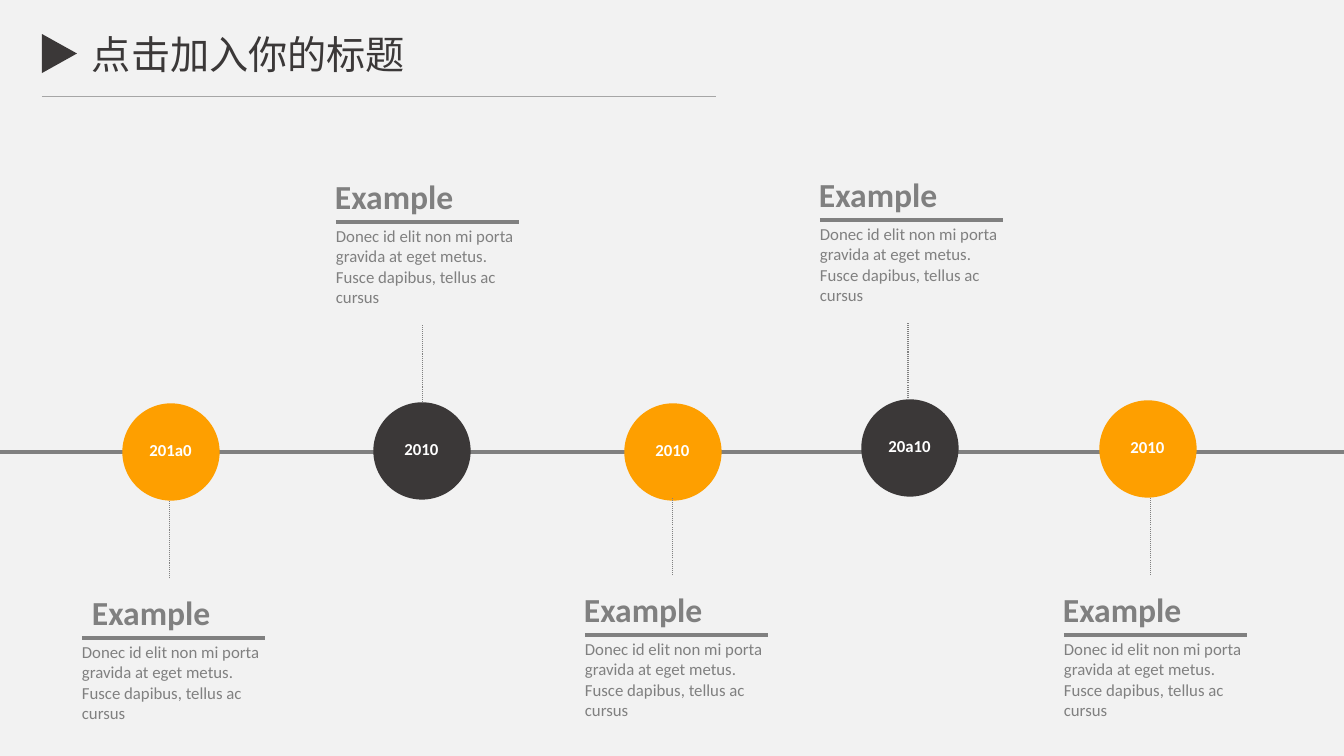
from lxml import etree
from pptx import Presentation
from pptx.dml.color import RGBColor
from pptx.enum.dml import MSO_LINE
from pptx.enum.shapes import MSO_CONNECTOR, MSO_SHAPE
from pptx.enum.text import MSO_AUTO_SIZE, PP_ALIGN
from pptx.oxml.ns import qn
from pptx.util import Pt

STRAIGHT = MSO_CONNECTOR.STRAIGHT
OVAL, TRIANGLE = MSO_SHAPE.OVAL, MSO_SHAPE.ISOSCELES_TRIANGLE
CENTER, LEFT = PP_ALIGN.CENTER, PP_ALIGN.LEFT
GROW = MSO_AUTO_SIZE.SHAPE_TO_FIT_TEXT
DOTTED = MSO_LINE.ROUND_DOT

# Content
TITLE = "点击加入你的标题"
HEADING = "Example"
BODY = "Donec id elit non mi porta gravida at eget metus. Fusce dapibus, tellus ac cursus"
PAPER, DARK, ORANGE, GREY, WHITE = "F2F2F2", "3B3838", "FE9F00", "808080", "FFFFFF"
PALE = "A6A6A6"

# year, colour, circle (left, top), rule (left, y), stem x, heading left
MILESTONES = [
    ("201a0", ORANGE, (125, 406), (82, 638), 170, 82),
    ("2010", DARK, (376, 405), (336, 222), 423, 325),
    ("2010", ORANGE, (627, 406), (585, 635), 673, 574),
    ("20a10", DARK, (864, 402), (820, 220), 908, 809),
    ("2010", ORANGE, (1102, 403), (1064, 635), 1151, 1053),
]

# Formats
TITLE_FONT = {"name": "Noto Sans CJK SC", "size": Pt(28)}
HEADING_FONT = {"name": "Calibri", "size": Pt(24), "bold": True}
BODY_FONT = {"name": "Calibri", "size": Pt(12)}
YEAR_FONT = {"name": "Calibri", "size": Pt(12), "bold": True}
NO_MARGINS = dict.fromkeys(
    ("margin_left", "margin_top", "margin_right", "margin_bottom"), 0)

# Layout in px
WIDTH, HEIGHT = 1344, 756
AXIS_Y = 452
CIRCLE = 92
RULE_LENGTH = 183
STEM_LENGTH = 77
STEM_BELOW_RULE = 103
STEM_ABOVE_RULE = 137


def emu(px):
    return round(px * 914400 / 100.8)


def color(hex_value):
    return RGBColor.from_string(hex_value)


def apply(target, values):
    for name, value in values.items():
        setattr(target, name, value)


def add_line(start, end, hex_value, weight, dash=None):
    line = slide.shapes.add_connector(STRAIGHT, *map(emu, (*start, *end)))
    line.line.color.rgb = color(hex_value)
    line.line.width = Pt(weight)
    if dash:
        line.line.dash_style = dash
    etree.SubElement(line._element.spPr, qn("a:effectLst"))


def add_solid(kind, box, hex_value, outline=None):
    solid = slide.shapes.add_shape(kind, *map(emu, box))
    solid.shadow.inherit = False
    solid.fill.solid()
    solid.fill.fore_color.rgb = color(hex_value)
    if outline:
        solid.line.color.rgb = color(hex_value)
        solid.line.width = Pt(outline)
    else:
        solid.line.fill.background()
    return solid


def add_text(text, box, font, hex_value, align=LEFT, frame_format=None):
    frame = slide.shapes.add_textbox(*map(emu, box)).text_frame
    apply(frame, {"word_wrap": True, "auto_size": GROW, **(frame_format or {})})
    paragraph = frame.paragraphs[0]
    paragraph.alignment = align
    run = paragraph.add_run()
    run.text = text
    apply(run.font, font)
    run.font.color.rgb = color(hex_value)
    east_asian = etree.SubElement(run.font._element, qn("a:ea"))
    east_asian.set("typeface", font["name"])


prs = Presentation()
prs.slide_width, prs.slide_height = emu(WIDTH), emu(HEIGHT)
slide = prs.slides.add_slide(prs.slide_layouts[6])
slide.background.fill.solid()
slide.background.fill.fore_color.rgb = color(PAPER)

# Title
add_text(TITLE, (59, 30, 379, 47), TITLE_FONT, DARK, CENTER, NO_MARGINS)
add_solid(TRIANGLE, (40, 36, 39, 35), DARK).rotation = 90
add_line((42, 96), (716, 96), PALE, 0.5)

# Timeline axis
add_line((0, AXIS_Y), (WIDTH, AXIS_Y), GREY, 3.5)

# Milestones
for year, fill, (circle_x, circle_y), (rule_x, rule_y), stem_x, heading_x in MILESTONES:
    add_text(BODY, (rule_x - 10, rule_y - 1, 205, 92), BODY_FONT, GREY)
    add_text(HEADING, (heading_x, rule_y - 51, 164, 50), HEADING_FONT, GREY)
    add_line((rule_x, rule_y), (rule_x + RULE_LENGTH, rule_y), GREY, 3)

    add_solid(OVAL, (circle_x, circle_y, CIRCLE, CIRCLE), fill, 3.8)
    add_text(year, (circle_x + 12, circle_y + 29, 67, 30), YEAR_FONT, WHITE, CENTER)

    above_axis = rule_y < AXIS_Y
    stem_y = rule_y + STEM_BELOW_RULE if above_axis else rule_y - STEM_ABOVE_RULE
    add_line((stem_x, stem_y + STEM_LENGTH), (stem_x, stem_y), GREY, 0.75, DOTTED)

prs.save("out.pptx")
